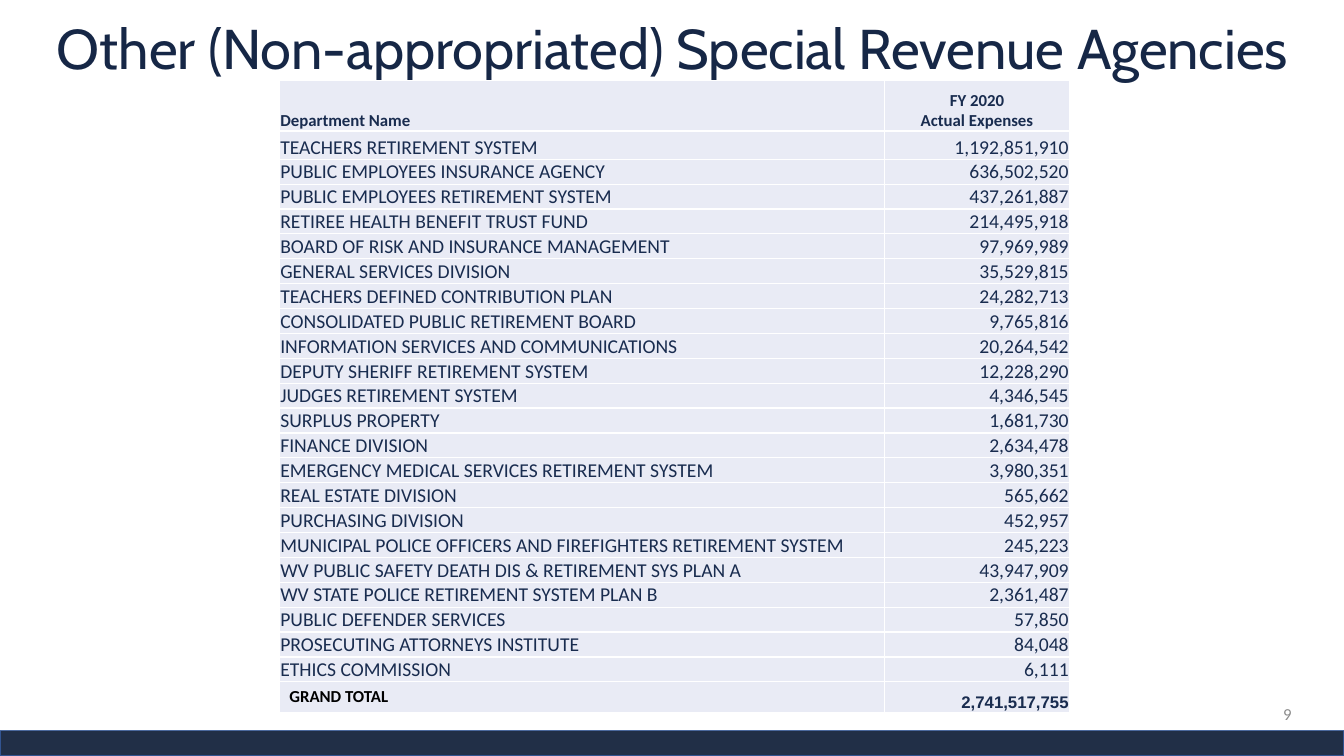
from dataclasses import dataclass
from typing import Any

from lxml import etree
from pptx import Presentation
from pptx.dml.color import RGBColor
from pptx.enum.shapes import MSO_SHAPE
from pptx.enum.text import MSO_ANCHOR, MSO_AUTO_SIZE, PP_ALIGN
from pptx.oxml.ns import qn
from pptx.util import Inches, Pt

LEFT, CENTER, RIGHT = PP_ALIGN.LEFT, PP_ALIGN.CENTER, PP_ALIGN.RIGHT
MIDDLE, BOTTOM, TOP = MSO_ANCHOR.MIDDLE, MSO_ANCHOR.BOTTOM, MSO_ANCHOR.TOP
RECT = MSO_SHAPE.RECTANGLE
NO_FIT = MSO_AUTO_SIZE.NONE

WIDE, HIGH = Inches(13.33), Inches(7.5)
NAVY, INK, PALE, WHITE = "162746", "192C4F", "E9EBF5", "FFFFFF"


@dataclass(frozen=True)
class Box:
    x: float
    y: float
    w: float
    h: float


@dataclass(frozen=True)
class Style:
    size: float
    color: str = INK
    align: Any = LEFT
    bold: bool = False
    face: str = "Calibri"


@dataclass(frozen=True)
class Band:
    box: Box
    fill: str
    line: str = ""


@dataclass(frozen=True)
class Row:
    name: str
    cost: str


BANDS = [
    Band(Box(0, 96.6, 100, 3.33), "212F47", "325491"),
    Band(Box(0, 95.93, 100, 0.67), WHITE),
]
GRID = Box(20.78, 10.67, 58.82, 82.8)
COLS = [45.01, 13.81]
HEAD = Row("Department Name", "FY 2020\nActual Expenses")
TOTAL = Row("GRAND TOTAL", "2,741,517,755")
ROWS = [
    Row("TEACHERS RETIREMENT SYSTEM", "1,192,851,910"),
    Row("PUBLIC EMPLOYEES INSURANCE AGENCY", "636,502,520"),
    Row("PUBLIC EMPLOYEES RETIREMENT SYSTEM", "437,261,887"),
    Row("RETIREE HEALTH BENEFIT TRUST FUND", "214,495,918"),
    Row("BOARD OF RISK AND INSURANCE MANAGEMENT", "97,969,989"),
    Row("GENERAL SERVICES DIVISION", "35,529,815"),
    Row("TEACHERS DEFINED CONTRIBUTION PLAN", "24,282,713"),
    Row("CONSOLIDATED PUBLIC RETIREMENT BOARD", "9,765,816"),
    Row("INFORMATION SERVICES AND COMMUNICATIONS", "20,264,542"),
    Row("DEPUTY SHERIFF RETIREMENT SYSTEM", "12,228,290"),
    Row("JUDGES RETIREMENT SYSTEM", "4,346,545"),
    Row("SURPLUS PROPERTY", "1,681,730"),
    Row("FINANCE DIVISION", "2,634,478"),
    Row("EMERGENCY MEDICAL SERVICES RETIREMENT SYSTEM", "3,980,351"),
    Row("REAL ESTATE DIVISION", "565,662"),
    Row("PURCHASING DIVISION", "452,957"),
    Row("MUNICIPAL POLICE OFFICERS AND FIREFIGHTERS RETIREMENT SYSTEM", "245,223"),
    Row("WV PUBLIC SAFETY DEATH DIS & RETIREMENT SYS PLAN A", "43,947,909"),
    Row("WV STATE POLICE RETIREMENT SYSTEM PLAN B", "2,361,487"),
    Row("PUBLIC DEFENDER SERVICES", "57,850"),
    Row("PROSECUTING ATTORNEYS INSTITUTE", "84,048"),
    Row("ETHICS COMMISSION", "6,111"),
]
TALL = [6.67, 3.73] + [3.2] * (len(ROWS) - 1) + [3.73]

HEADS = (Style(12, bold=True), Style(12, align=CENTER, bold=True))
BODY = (Style(14), Style(14, align=RIGHT))
SUMS = (Style(12, "000000", bold=True), Style(12, align=RIGHT, bold=True, face="Arial"))

TIGHT = {
    "margin_left": Inches(0.01),
    "margin_right": Inches(0.01),
    "margin_top": Inches(0.01),
    "margin_bottom": 0,
    "vertical_anchor": BOTTOM,
}
LOOSE = {"vertical_anchor": TOP}
FRAME = {"word_wrap": True, "auto_size": NO_FIT, "vertical_anchor": MIDDLE}
PLAIN = {"first_row": False, "horz_banding": False}


def put(item: Any, vals: dict[str, Any]) -> None:
    for key, val in vals.items():
        setattr(item, key, val)


def hue(code: str) -> RGBColor:
    return RGBColor.from_string(code)


def across(share: float) -> int:
    return round(WIDE * share / 100)


def down(share: float) -> int:
    return round(HIGH * share / 100)


def place(box: Box) -> tuple[int, int, int, int]:
    return across(box.x), down(box.y), across(box.w), down(box.h)


def paint(item: Any, code: str) -> None:
    item.fill.solid()
    item.fill.fore_color.rgb = hue(code)


def write(frame: Any, text: str, style: Style) -> None:
    frame.text = text
    for para in frame.paragraphs:
        para.alignment = style.align
        for run in para.runs:
            put(run.font, {"size": Pt(style.size), "name": style.face, "bold": style.bold})
            run.font.color.rgb = hue(style.color)


def draw_title(slide: Any, box: Box, text: str) -> None:
    title = slide.shapes.title
    put(title, dict(zip(("left", "top", "width", "height"), place(box))))
    put(title.text_frame, FRAME)
    write(title.text_frame, text, Style(40, NAVY, CENTER, face="Cabin"))
    title.text_frame.paragraphs[0].line_spacing = 0.9


def draw_band(slide: Any, band: Band) -> None:
    shape = slide.shapes.add_shape(RECT, *place(band.box))
    shape.shadow.inherit = False
    paint(shape, band.fill)
    if band.line:
        shape.line.color.rgb = hue(band.line)
        shape.line.width = Pt(1)
    else:
        shape.line.fill.background()


def edge(cell: Any, code: str) -> None:
    props = cell._tc.get_or_add_tcPr()
    for spot, side in enumerate(("lnL", "lnR", "lnT", "lnB")):
        line = etree.Element(qn(f"a:{side}"), w=str(Pt(1)))
        fill = etree.SubElement(line, qn("a:solidFill"))
        etree.SubElement(fill, qn("a:srgbClr"), val=code)
        props.insert(spot, line)


def draw_cell(cell: Any, text: str, style: Style, form: dict[str, Any]) -> None:
    write(cell.text_frame, text, style)
    put(cell, form)
    paint(cell, PALE)
    edge(cell, WHITE)


def draw_table(slide: Any) -> None:
    lines = [(HEAD, HEADS), *((row, BODY) for row in ROWS), (TOTAL, SUMS)]
    table = slide.shapes.add_table(len(lines), len(COLS), *place(GRID)).table
    put(table, PLAIN)
    for col, share in zip(table.columns, COLS):
        col.width = across(share)
    for row, share in zip(table.rows, TALL):
        row.height = down(share)
    for pos, (row, styles) in enumerate(lines):
        form = LOOSE if row is TOTAL else TIGHT
        draw_cell(table.cell(pos, 0), row.name, styles[0], form)
        draw_cell(table.cell(pos, 1), row.cost, styles[1], TIGHT)


def draw_page(slide: Any, box: Box, text: str) -> None:
    frame = slide.shapes.add_textbox(*place(box)).text_frame
    put(frame, FRAME)
    write(frame, text, Style(12, "8C8C8C", RIGHT))


def main() -> None:
    deck = Presentation()
    put(deck, {"slide_width": WIDE, "slide_height": HIGH})
    slide = deck.slides.add_slide(deck.slide_layouts[5])
    draw_title(slide, Box(1.28, 0, 97.52, 13.6), "Other (Non-appropriated) Special Revenue Agencies")
    for band in BANDS:
        draw_band(slide, band)
    draw_table(slide)
    draw_page(slide, Box(70.67, 91.73, 26.18, 5.33), "9")
    deck.save("out.pptx")


if __name__ == "__main__":
    main()
